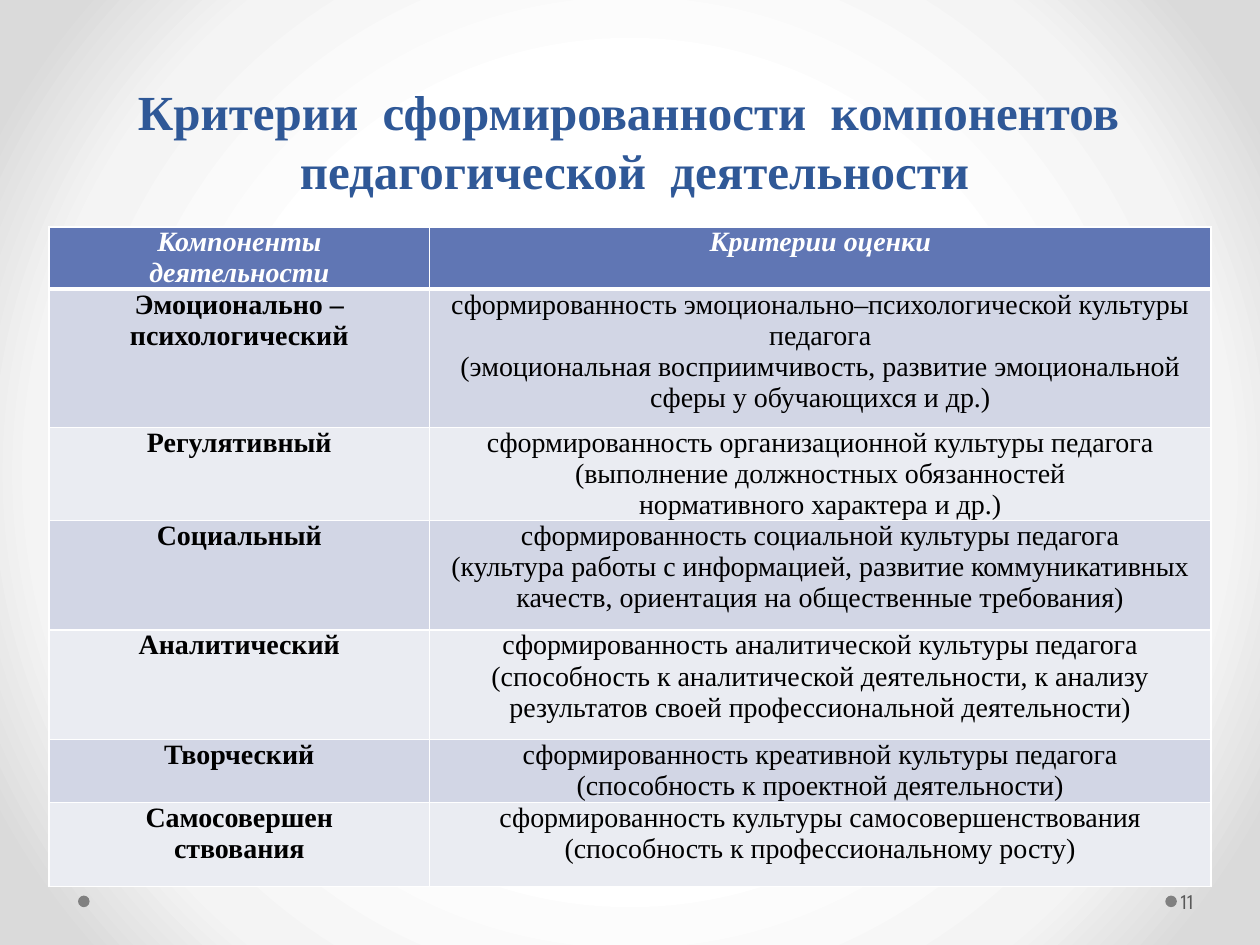
from dataclasses import dataclass

from lxml.etree import SubElement
from pptx import Presentation
from pptx.dml.color import RGBColor
from pptx.enum.shapes import MSO_SHAPE as Shape
from pptx.enum.text import MSO_ANCHOR as Anchor, MSO_AUTO_SIZE as AutoSize, PP_ALIGN as Align
from pptx.oxml import parse_xml
from pptx.oxml.ns import nsdecls, qn
from pptx.util import Pt


@dataclass(frozen=True)
class Theme:
    title: str = "2F5897"
    header: str = "6076B4"
    bands: tuple = ("D2D6E5", "EAECF2")
    white: str = "FFFFFF"
    black: str = "000000"
    dot: str = "808080"
    number: str = "595959"
    backdrop: tuple = ((50, "FFFFFF"), (76, "F4F4F4"), (92, "DADADA"))
    font: str = "Times New Roman"
    number_font: str = "League Spartan"
    title_size: int = 28
    table_size: int = 16
    number_size: int = 12


THEME = Theme()

TITLE = "Критерии  сформированности  компонентов  педагогической  деятельности"
HEADER = (("Компоненты", "деятельности"), ("Критерии оценки",))
CRITERIA = (
    (("Эмоционально –", "психологический"),
     ("сформированность эмоционально–психологической культуры педагога",
      "(эмоциональная восприимчивость, развитие эмоциональной сферы у обучающихся и др.)")),
    (("Регулятивный",),
     ("сформированность организационной культуры педагога (выполнение должностных обязанностей",
      "нормативного характера и др.)")),
    (("Социальный",),
     ("сформированность социальной культуры педагога",
      "(культура работы с информацией, развитие коммуникативных качеств, "
      "ориентация на общественные требования)")),
    (("Аналитический",),
     ("сформированность аналитической культуры педагога",
      "(способность к аналитической деятельности, к анализу результатов своей "
      "профессиональной деятельности)")),
    (("Творческий",),
     ("сформированность креативной культуры педагога",
      "(способность к проектной деятельности)")),
    (("Самосовершен", "ствования"),
     ("сформированность культуры самосовершенствования",
      "(способность к профессиональному росту)")),
)
COLUMN_WIDTHS = (217.5, 446.5)
ROW_HEIGHTS = (35, 79, 53, 62.5, 62.5, 36, 48)


def add_run(paragraph, text, size, color, font=THEME.font, bold=False, italic=False):
    run = paragraph.add_run()
    run.text = text
    run.font.name = font
    run.font.size = Pt(size)
    run.font.bold = bold
    run.font.italic = italic
    run.font.color.rgb = RGBColor.from_string(color)


def set_margins(holder, left, top, right, bottom):
    holder.margin_left, holder.margin_top = Pt(left), Pt(top)
    holder.margin_right, holder.margin_bottom = Pt(right), Pt(bottom)


def paint_backdrop(slide):
    """Fill the background with a gradient that darkens from the centre."""
    slide.background.fill.solid()
    stops = "".join(
        f'<a:gs pos="{place * 1000}"><a:srgbClr val="{color}"/></a:gs>'
        for place, color in THEME.backdrop)
    gradient = parse_xml(
        f'<a:gradFill {nsdecls("a")} rotWithShape="1"><a:gsLst>{stops}</a:gsLst>'
        '<a:path path="circle"><a:fillToRect l="50000" t="50000" r="50000" b="50000"/></a:path>'
        '</a:gradFill>')
    solid = next(slide.element.iter(qn("a:solidFill")))
    solid.getparent().replace(solid, gradient)


def place_title(slide, left, top, width, height):
    title = slide.shapes.title
    title.left, title.top, title.width, title.height = map(Pt, (left, top, width, height))
    frame = title.text_frame
    frame.auto_size = AutoSize.NONE
    frame.word_wrap = True
    frame.vertical_anchor = Anchor.BOTTOM
    set_margins(frame, 7.2, 3.6, 7.2, 46)
    heading = frame.paragraphs[0]
    heading.alignment = Align.CENTER
    heading.line_spacing = Pt(34)
    add_run(heading, TITLE, THEME.title_size, THEME.title, bold=True)


def border_cell(cell, bottom_width):
    properties = cell._tc.get_or_add_tcPr()
    for position, side in enumerate("LRTB"):
        width = bottom_width if side == "B" else 1
        line = SubElement(properties, qn(f"a:ln{side}"), w=str(Pt(width)))
        fill = SubElement(line, qn("a:solidFill"))
        SubElement(fill, qn("a:srgbClr"), val=THEME.white)
        properties.insert(position, line)


def fill_cell(cell, lines, fill, color, bold, italic=False, bottom_width=1):
    cell.fill.solid()
    cell.fill.fore_color.rgb = RGBColor.from_string(fill)
    set_margins(cell, 5, 0, 5, 0)
    border_cell(cell, bottom_width)
    frame = cell.text_frame
    for index, line in enumerate(lines):
        paragraph = frame.add_paragraph() if index else frame.paragraphs[0]
        paragraph.alignment = Align.CENTER
        add_run(paragraph, line, THEME.table_size, color, bold=bold, italic=italic)


def place_criteria(slide, left, top):
    table = slide.shapes.add_table(
        len(ROW_HEIGHTS), len(COLUMN_WIDTHS), Pt(left), Pt(top),
        Pt(sum(COLUMN_WIDTHS)), Pt(sum(ROW_HEIGHTS))).table
    for column, width in zip(table.columns, COLUMN_WIDTHS):
        column.width = Pt(width)
    for row, height in zip(table.rows, ROW_HEIGHTS):
        row.height = Pt(height)
    for column, lines in enumerate(HEADER):
        fill_cell(table.cell(0, column), lines, THEME.header, THEME.white,
                  bold=True, italic=True, bottom_width=3)
    for row, entry in enumerate(CRITERIA):
        band = THEME.bands[row % 2]
        for column, lines in enumerate(entry):
            fill_cell(table.cell(row + 1, column), lines, band, THEME.black, bold=column == 0)


def place_footer(slide, left, top, width, height):
    """Put a dot at the left edge, and another before the page number at the right."""
    dot_size, number_width = 6.6, 44
    number_left = left + width - number_width
    for dot_left in (left, number_left - dot_size):
        dot = slide.shapes.add_shape(
            Shape.OVAL, Pt(dot_left), Pt(top + (height - dot_size) / 2),
            Pt(dot_size), Pt(dot_size))
        dot.shadow.inherit = False
        dot.fill.solid()
        dot.fill.fore_color.rgb = RGBColor.from_string(THEME.dot)
        dot.line.fill.background()
    number = slide.shapes.add_textbox(Pt(number_left), Pt(top), Pt(number_width), Pt(height))
    frame = number.text_frame
    frame.word_wrap = True
    frame.vertical_anchor = Anchor.MIDDLE
    set_margins(frame, 2.2, 3.6, 3.6, 3.6)
    add_run(frame.paragraphs[0], "11", THEME.number_size, THEME.number, THEME.number_font)


def main():
    deck = Presentation()
    deck.slide_width, deck.slide_height = Pt(720), Pt(540)
    slide = deck.slides.add_slide(deck.slide_layouts[5])
    paint_backdrop(slide)
    place_title(slide, 44.6, 0, 636, 160)
    place_criteria(slide, 28, 129.6)
    place_footer(slide, 44.6, 500.6, 671.9, 29)
    deck.save("out.pptx")


if __name__ == "__main__":
    main()
